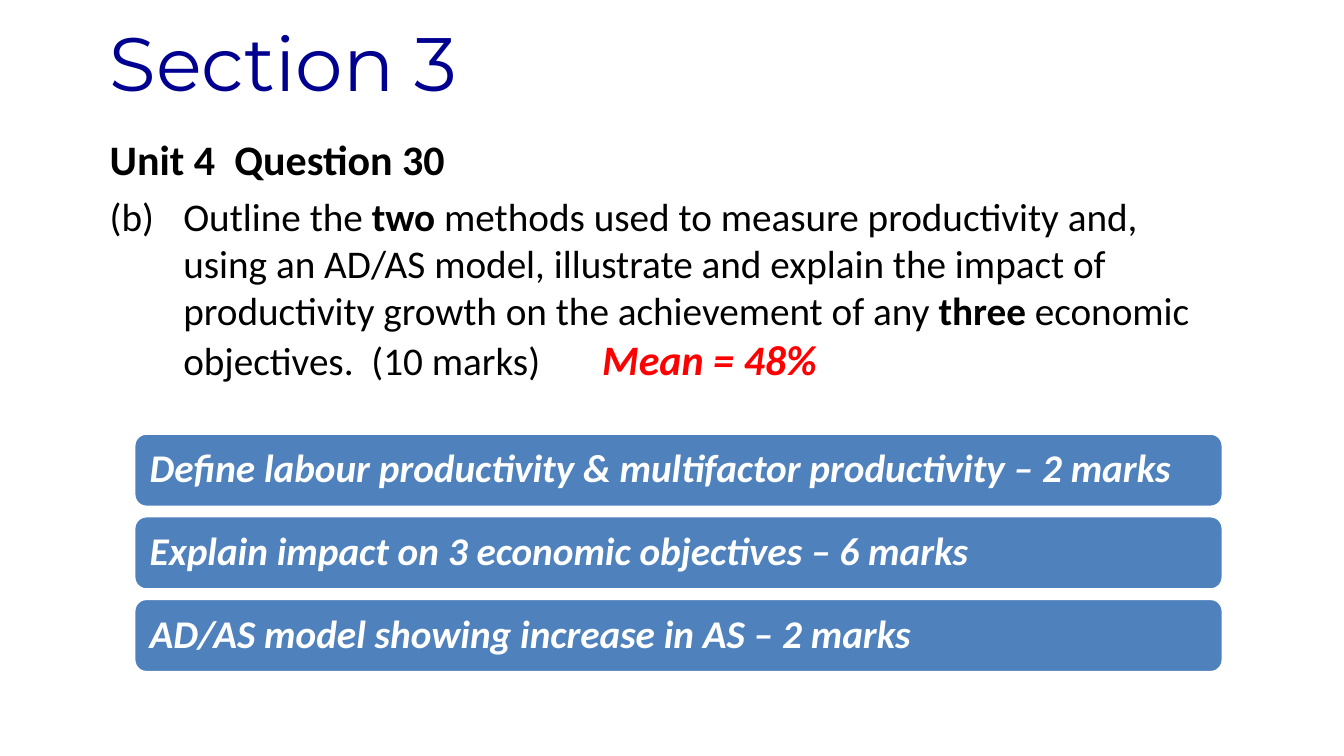
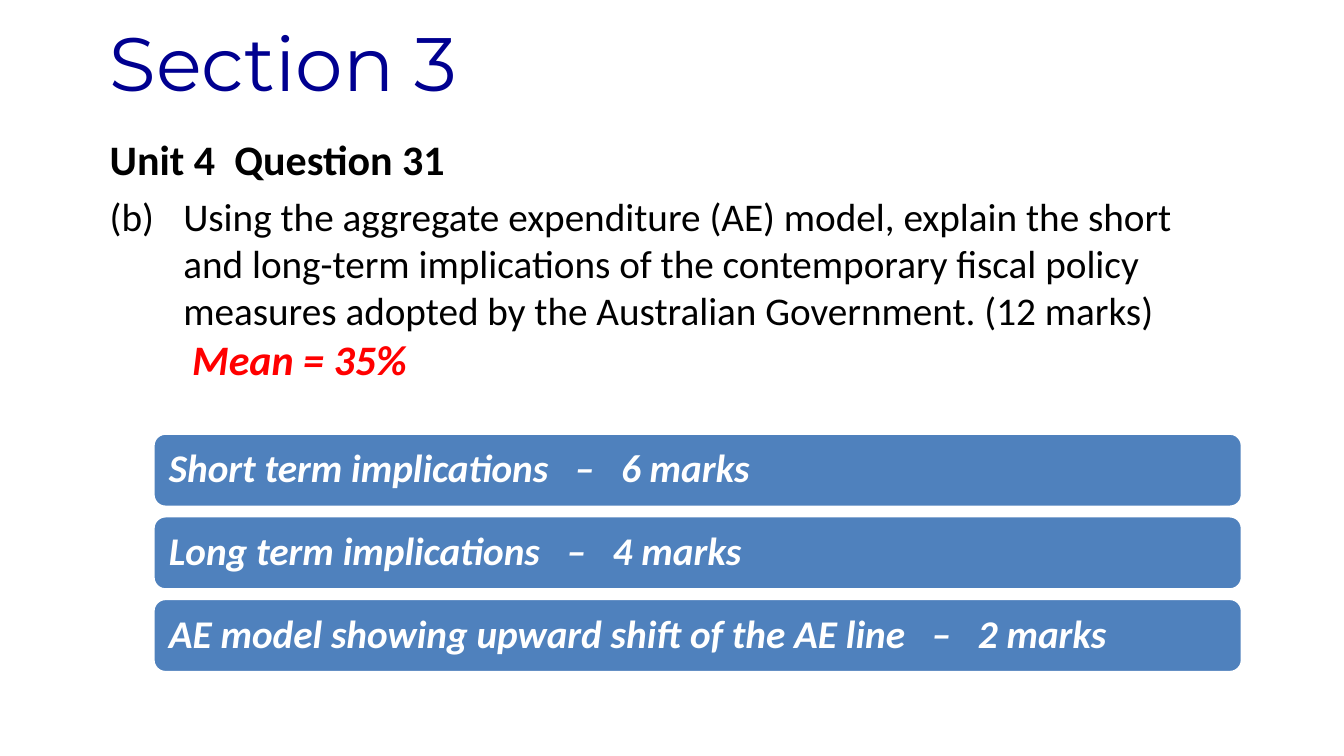
from pptx import Presentation
from pptx.dml.color import RGBColor
from pptx.enum.shapes import MSO_SHAPE
from pptx.enum.text import MSO_ANCHOR, PP_ALIGN
from pptx.util import Inches, Pt

NAVY = RGBColor(0x00, 0x00, 0x90)
BLACK = RGBColor(0x00, 0x00, 0x00)
RED = RGBColor(0xFF, 0x00, 0x00)
WHITE = RGBColor(0xFF, 0xFF, 0xFF)
BLUE = RGBColor(0x4F, 0x81, 0xBD)

# Run styles: font, size, colour, bold, italic
TITLE = ("Montserrat", 54, NAVY, False, False)
HEADING = ("Calibri", 30, BLACK, True, False)
BODY = ("Calibri", 28, BLACK, False, False)
STRONG = ("Calibri", 28, BLACK, True, False)
MEAN = ("Calibri", 30, RED, True, True)
BAR = ("Calibri", 28, WHITE, True, True)

LINE_BREAK = "\n"


class ExamDeck:
    """Holds the shared style and the slide being built."""

    left = 0.99
    bar_top, bar_pitch = 4.3, 0.82
    bar_width, bar_height = 10.8, 0.73

    def __init__(self):
        self.prs = Presentation()
        self.prs.slide_width, self.prs.slide_height = Inches(13.33), Inches(7.5)
        self.slide = None

    def new_slide(self):
        self.slide = self.prs.slides.add_slide(self.prs.slide_layouts[6])

    def add_run(self, paragraph, text, style, gap=0):
        """Add one run; gap widens its letter spacing, in points."""
        if text == LINE_BREAK:
            paragraph.add_line_break()
            return
        run = paragraph.add_run()
        run.text = text
        font = run.font
        font.name, size, font.color.rgb, font.bold, font.italic = style
        font.size = Pt(size)
        if gap:
            run._r.get_or_add_rPr().set("spc", str(round(gap * 100)))

    def text_frame(self, top, width, height):
        box = self.slide.shapes.add_textbox(
            Inches(self.left), Inches(top), Inches(width), Inches(height))
        box.text_frame.word_wrap = True
        return box.text_frame

    def hang(self, paragraph, indent):
        properties = paragraph._p.get_or_add_pPr()
        properties.set("marL", str(Inches(indent)))
        properties.set("indent", str(-Inches(indent)))

    def title(self, text):
        frame = self.text_frame(0.04, 10.18, 1.13)
        frame.vertical_anchor = MSO_ANCHOR.MIDDLE
        self.add_run(frame.paragraphs[0], text, TITLE)

    def question(self, number, runs, width):
        frame = self.text_frame(1.28, width, 2.81)
        heading = frame.paragraphs[0]
        self.hang(heading, 0.59)
        self.add_run(heading, "Unit 4", HEADING)
        self.add_run(heading, " ", HEADING, gap=6.8)
        self.add_run(heading, f"Question {number}", HEADING)
        body = frame.add_paragraph()
        self.hang(body, 0.73)
        body.space_before = Pt(5.6)
        for run in runs:
            self.add_run(body, *run)

    def mark_bars(self, left, bars, gap=0):
        for row, (topic, marks) in enumerate(bars):
            bar = self.slide.shapes.add_shape(
                MSO_SHAPE.ROUNDED_RECTANGLE,
                Inches(left), Inches(self.bar_top + row * self.bar_pitch),
                Inches(self.bar_width), Inches(self.bar_height))
            bar.shadow.inherit = False
            bar.fill.solid()
            bar.fill.fore_color.rgb = BLUE
            bar.line.color.rgb = WHITE
            bar.line.width = Pt(2)
            frame = bar.text_frame
            frame.word_wrap = True
            frame.vertical_anchor = MSO_ANCHOR.MIDDLE
            # The rounded corner adds a small inset of its own
            frame.margin_left = frame.margin_right = Inches(0.12)
            label = frame.paragraphs[0]
            label.alignment = PP_ALIGN.LEFT
            label.line_spacing = 0.9
            self.add_run(label, topic, BAR)
            self.add_run(label, " ", BAR, gap)
            self.add_run(label, "–", BAR)
            self.add_run(label, " ", BAR, gap)
            self.add_run(label, f"{marks} marks", BAR)


def main():
    deck = ExamDeck()

    # Question 30: productivity
    deck.new_slide()
    deck.title("Section 3")
    deck.question(30, [
        ("(b)\tOutline the ", BODY),
        ("two", STRONG),
        (" methods used to measure productivity and, using an AD/AS model, "
         "illustrate and explain the impact of productivity growth on the "
         "achievement of any ", BODY),
        ("three", STRONG),
        (" economic objectives.", BODY),
        (" ", BODY, 6.3),
        ("(10 marks)", BODY),
        (" ", BODY, 38),
        ("Mean = 48%", MEAN),
    ], width=11.14)
    deck.mark_bars(1.33, [
        ("Define labour productivity & multifactor productivity", 2),
        ("Explain impact on 3 economic objectives", 6),
        ("AD/AS model showing increase in AS", 2),
    ])

    # Question 31: fiscal policy
    deck.new_slide()
    deck.title("Section 3")
    deck.question(31, [
        ("(b)\tUsing the aggregate expenditure (AE) model, explain the short "
         "and long-term implications of the contemporary fiscal policy "
         "measures adopted by the Australian Government. (12 marks)", BODY),
        (LINE_BREAK, BODY),
        (" ", BODY),
        ("Mean = 35%", MEAN),
    ], width=11.03)
    deck.mark_bars(1.52, [
        ("Short term implications", 6),
        ("Long term implications", 4),
        ("AE model showing upward shift of the AE line", 2),
    ], gap=12.7)

    deck.prs.save("out.pptx")


if __name__ == "__main__":
    main()
